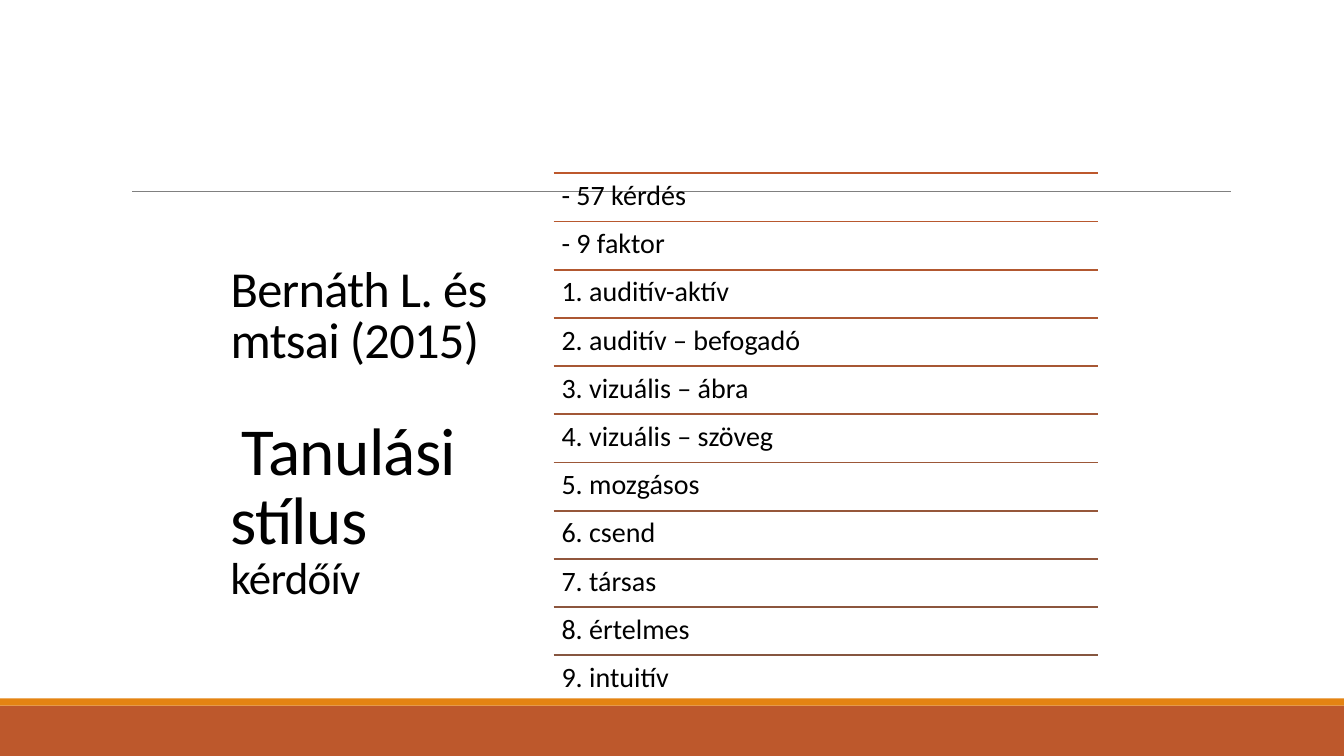
import pptx
import pptx.util
import pptx.dml.color
import pptx.enum.shapes
import pptx.enum.text
import pptx.oxml

Inches = pptx.util.Inches
Pt = pptx.util.Pt

# Content
TITLE = [
    {"runs": [("Bernáth L. és mtsai (2015)", 36)], "gap": 0, "indent": 0},
    {"runs": [("Tanulási stílus ", 48), ("kérdőív", 32)], "gap": 37, "indent": 0.11},
]
FEATURES = ["- 57 kérdés", "- 9 faktor"]
FACTORS = [
    "auditív-aktív", "auditív – befogadó", "vizuális – ábra",
    "vizuális – szöveg", "mozgásos", "csend", "társas", "értelmes", "intuitív",
]
ROWS = FEATURES + [f"{number}. {factor}" for number, factor in enumerate(FACTORS, 1)]

COLORS = {
    "text": "000000", "footer": "BD582C", "stripe": "E48312", "header_rule": "808080",
    "first_rule": "BD582C", "last_rule": "865640",
}
FONT = "Calibri"

# Layout, in inches
WIDTH, HEIGHT = 13.33, 7.5
BANDS = [("footer", 7, 0.5), ("stripe", 6.93, 0.07)]
LIST_LEFT, LIST_TOP, LIST_WIDTH = 5.49, 1.72, 5.4
ROW_HEIGHT = (6.5 - LIST_TOP) / (len(ROWS) - 1)

deck = pptx.Presentation()
deck.slide_width, deck.slide_height = Inches(WIDTH), Inches(HEIGHT)
slide = deck.slides.add_slide(deck.slide_layouts[6])


def rgb(value):
    return pptx.dml.color.RGBColor.from_string(value)


def blend(start, end, share):
    pairs = [(int(start[i:i + 2], 16), int(end[i:i + 2], 16)) for i in (0, 2, 4)]
    return "".join(f"{round(a + (b - a) * share):02X}" for a, b in pairs)


def add_rule(left, top, width, color, weight):
    rule = slide.shapes.add_connector(
        pptx.enum.shapes.MSO_CONNECTOR.STRAIGHT,
        Inches(left), Inches(top), Inches(left + width), Inches(top))
    rule.line.color.rgb = rgb(color)
    rule.line.width = Pt(weight)
    rule._element.spPr.append(pptx.oxml.parse_xml(
        '<a:effectLst xmlns:a="http://schemas.openxmlformats.org/drawingml/2006/main"/>'))


def add_text_frame(left, top, width, height, formats):
    frame = slide.shapes.add_textbox(
        Inches(left), Inches(top), Inches(width), Inches(height)).text_frame
    for name, value in formats.items():
        setattr(frame, name, value)
    return frame


def add_run(paragraph, text, size):
    run = paragraph.add_run()
    run.text = text
    for name, value in {"name": FONT, "size": Pt(size)}.items():
        setattr(run.font, name, value)
    run.font.color.rgb = rgb(COLORS["text"])
    return run


# Footer bands
for color, top, height in BANDS:
    band = slide.shapes.add_shape(
        pptx.enum.shapes.MSO_SHAPE.RECTANGLE, 0, Inches(top), Inches(WIDTH), Inches(height))
    band.shadow.inherit = False
    band.fill.solid()
    band.fill.fore_color.rgb = rgb(COLORS[color])
    band.line.fill.background()

# Header rule
add_rule(1.31, 1.9, 10.9, COLORS["header_rule"], 0.5)

# Title
title = add_text_frame(2.19, 1.47, 2.8, 4.57, {
    "word_wrap": True, "vertical_anchor": pptx.enum.text.MSO_ANCHOR.BOTTOM})
for index, part in enumerate(TITLE):
    paragraph = title.add_paragraph() if index else title.paragraphs[0]
    paragraph.line_spacing = 0.85
    paragraph.space_before = Pt(part["gap"])
    paragraph._p.get_or_add_pPr().set("indent", str(Inches(part["indent"])))
    for text, size in part["runs"]:
        run = add_run(paragraph, text, size)
        run.font._element.set("spc", "-50")

# Ruled list
margins = {f"margin_{side}": Inches(0.08) for side in ("left", "top", "right", "bottom")}
for index, row in enumerate(ROWS):
    top = LIST_TOP + index * ROW_HEIGHT
    share = index / (len(ROWS) - 1)
    add_rule(LIST_LEFT, top, LIST_WIDTH,
             blend(COLORS["first_rule"], COLORS["last_rule"], share), 1.25)
    entry = add_text_frame(LIST_LEFT, top, LIST_WIDTH, ROW_HEIGHT,
                           {"word_wrap": True, **margins})
    entry.paragraphs[0].line_spacing = 0.9
    add_run(entry.paragraphs[0], row, 20)

deck.save("out.pptx")
